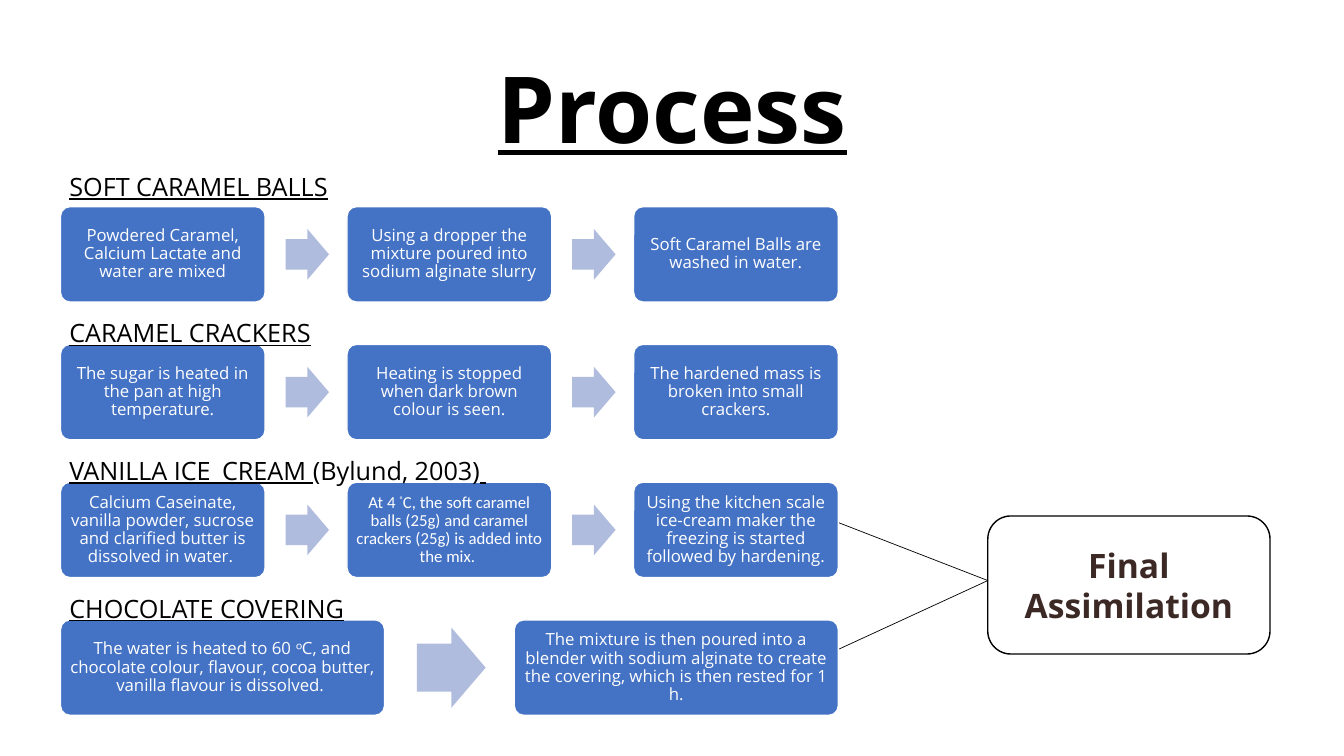
from dataclasses import dataclass

import pptx
import pptx.dml.color
import pptx.enum.shapes
import pptx.enum.text
import pptx.oxml.ns
import pptx.util
from lxml import etree

Pt = pptx.util.Pt
Color = pptx.dml.color.RGBColor
Shape = pptx.enum.shapes.MSO_SHAPE
Anchor = pptx.enum.text.MSO_ANCHOR
Align = pptx.enum.text.PP_ALIGN


@dataclass(frozen=True)
class Theme:
    font: str = "Open Sans"
    alternate_font: str = "Calibri"
    ink: Color = Color(0, 0, 0)
    paper: Color = Color(255, 255, 255)
    step: Color = Color(0x44, 0x72, 0xC4)
    arrow: Color = Color(0xB0, 0xBC, 0xDE)
    final: Color = Color(0x3C, 0x29, 0x25)
    title_size: float = 66
    final_size: float = 24
    caption_size: float = 18
    step_size: float = 12


THEME = Theme()


@dataclass(frozen=True)
class Span:
    text: str
    size: float
    color: Color
    font: str = THEME.font
    bold: bool = False
    underline: bool = False
    baseline: int = 0


@dataclass(frozen=True)
class Box:
    left: float
    top: float
    width: float
    height: float


@dataclass(frozen=True)
class Process:
    caption: list[Span]
    caption_rise: float
    steps: list[list[Span]]


def caption(text: str, underline: bool = True) -> Span:
    return Span(text, THEME.caption_size, THEME.ink, underline=underline)


def step(text: str, font: str = THEME.font, baseline: int = 0) -> Span:
    return Span(text, THEME.step_size, THEME.paper, font, baseline=baseline)


PROCESSES = [
    Process([caption("SOFT CARAMEL BALLS")], 28.8, [
        [step("Powdered Caramel, Calcium Lactate and water are mixed")],
        [step("Using a dropper the mixture poured into sodium alginate slurry")],
        [step("Soft Caramel Balls are washed in water.")],
    ]),
    Process([caption("CARAMEL CRACKERS")], 22.8, [
        [step("The sugar is heated in the pan at high temperature.")],
        [step("Heating is stopped when dark brown colour is seen.")],
        [step("The hardened mass is broken into small crackers.")],
    ]),
    Process([caption("VANILLA ICE_CREAM "), caption("(Bylund, 2003)", False), caption(" ")], 22.8, [
        [step("Calcium Caseinate, vanilla powder, sucrose and clarified butter is dissolved in water. ")],
        [step("At 4 ", THEME.alternate_font),
         step("ᵒ", THEME.alternate_font, 30000),
         step("C, the soft caramel balls (25g) and caramel crackers (25g) is added into the mix. ",
              THEME.alternate_font)],
        [step("Using the kitchen scale ice-cream maker the freezing is started followed by hardening.")],
    ]),
    Process([caption("CHOCOLATE COVERING")], 22.8, [
        [step("The water is heated to 60 ᵒC, and chocolate colour, flavour, cocoa butter, "
              "vanilla flavour is dissolved. ")],
        [step("The mixture is then poured into a blender with sodium alginate to create "
              "the covering, which is then rested for 1 h.")],
    ]),
]

ROW_LEFT, ROW_WIDTH, ROW_TOP, ROW_PITCH, STEP_HEIGHT = 43.2, 555.6, 147.6, 98.4, 68.2
STEP_PITCH, ARROW_START, ARROW_WIDTH, ARROW_HEIGHT = 1.4, 1.1, 0.212, 0.248
FINAL_BOX = Box(705.6, 368.6, 201.6, 98.6)
LINK_LEFT, LINK_TOPS = 586.8, (368.6, 469.4)


def write(shape, spans: list[Span], align=Align.CENTER, anchor=Anchor.MIDDLE,
          spacing: float = 1.0, margin: tuple[float, float] = (7.2, 3.6)) -> None:
    frame = shape.text_frame
    frame.word_wrap = True
    frame.vertical_anchor = anchor
    frame.margin_left = frame.margin_right = Pt(margin[0])
    frame.margin_top = frame.margin_bottom = Pt(margin[1])
    para = frame.paragraphs[0]
    para.alignment = align
    para.line_spacing = spacing
    for span in spans:
        run = para.add_run()
        run.text = span.text
        run.font.name = span.font
        run.font.size = Pt(span.size)
        run.font.bold = span.bold
        run.font.underline = span.underline
        run.font.color.rgb = span.color
        if span.baseline:
            run._r.get_or_add_rPr().set("baseline", str(span.baseline))


def add_text(page, box: Box, spans: list[Span], **layout) -> None:
    shape = page.shapes.add_textbox(Pt(box.left), Pt(box.top), Pt(box.width), Pt(box.height))
    write(shape, spans, **layout)


def add_shape(page, kind, box: Box, fill: Color | None, line: Color | None,
              adjustments: tuple[float, ...] = ()):
    shape = page.shapes.add_shape(kind, Pt(box.left), Pt(box.top), Pt(box.width), Pt(box.height))
    shape.shadow.inherit = False
    for index, value in enumerate(adjustments):
        shape.adjustments[index] = value
    if fill is None:
        shape.fill.background()
    else:
        shape.fill.solid()
        shape.fill.fore_color.rgb = fill
    if line is None:
        shape.line.fill.background()
    else:
        shape.line.color.rgb = line
        shape.line.width = Pt(1)
    return shape


def add_link(page, top: float) -> None:
    link = page.shapes.add_connector(
        pptx.enum.shapes.MSO_CONNECTOR.STRAIGHT, Pt(LINK_LEFT), Pt(top),
        Pt(FINAL_BOX.left), Pt(414.7))
    link.line.color.rgb = THEME.ink
    link.line.width = Pt(0.5)
    etree.SubElement(link._element.spPr, pptx.oxml.ns.qn("a:effectLst"))


def add_process(page, process: Process, top: float) -> None:
    count = len(process.steps)
    width = ROW_WIDTH / (STEP_PITCH * (count - 1) + 1)
    for index, spans in enumerate(process.steps):
        left = ROW_LEFT + index * STEP_PITCH * width
        shape = add_shape(page, Shape.ROUNDED_RECTANGLE, Box(left, top, width, STEP_HEIGHT),
                          THEME.step, THEME.paper, (0.1,))
        write(shape, spans, spacing=0.9, margin=(3.6, 3.6))
        if index < count - 1:
            height = ARROW_HEIGHT * width
            arrow = Box(left + ARROW_START * width, top + (STEP_HEIGHT - height) / 2,
                        ARROW_WIDTH * width, height)
            add_shape(page, Shape.RIGHT_ARROW, arrow, THEME.arrow, None, (0.6, 0.5))
    add_text(page, Box(42.5, top - process.caption_rise, 318, 28.8), process.caption,
             align=Align.LEFT, anchor=Anchor.TOP)


def main() -> None:
    deck = pptx.Presentation()
    deck.slide_width, deck.slide_height = Pt(960), Pt(540)
    page = deck.slides.add_slide(deck.slide_layouts[6])
    for top in LINK_TOPS:
        add_link(page, top)
    final = add_shape(page, Shape.ROUNDED_RECTANGLE, FINAL_BOX, None, THEME.ink)
    write(final, [Span("Final Assimilation", THEME.final_size, THEME.final, bold=True)])
    title = Span("Process", THEME.title_size, THEME.ink, bold=True, underline=True)
    add_text(page, Box(66.2, 28.8, 828, 104.4), [title], spacing=0.9)
    for index, process in enumerate(PROCESSES):
        add_process(page, process, ROW_TOP + index * ROW_PITCH)
    deck.save("out.pptx")


if __name__ == "__main__":
    main()
